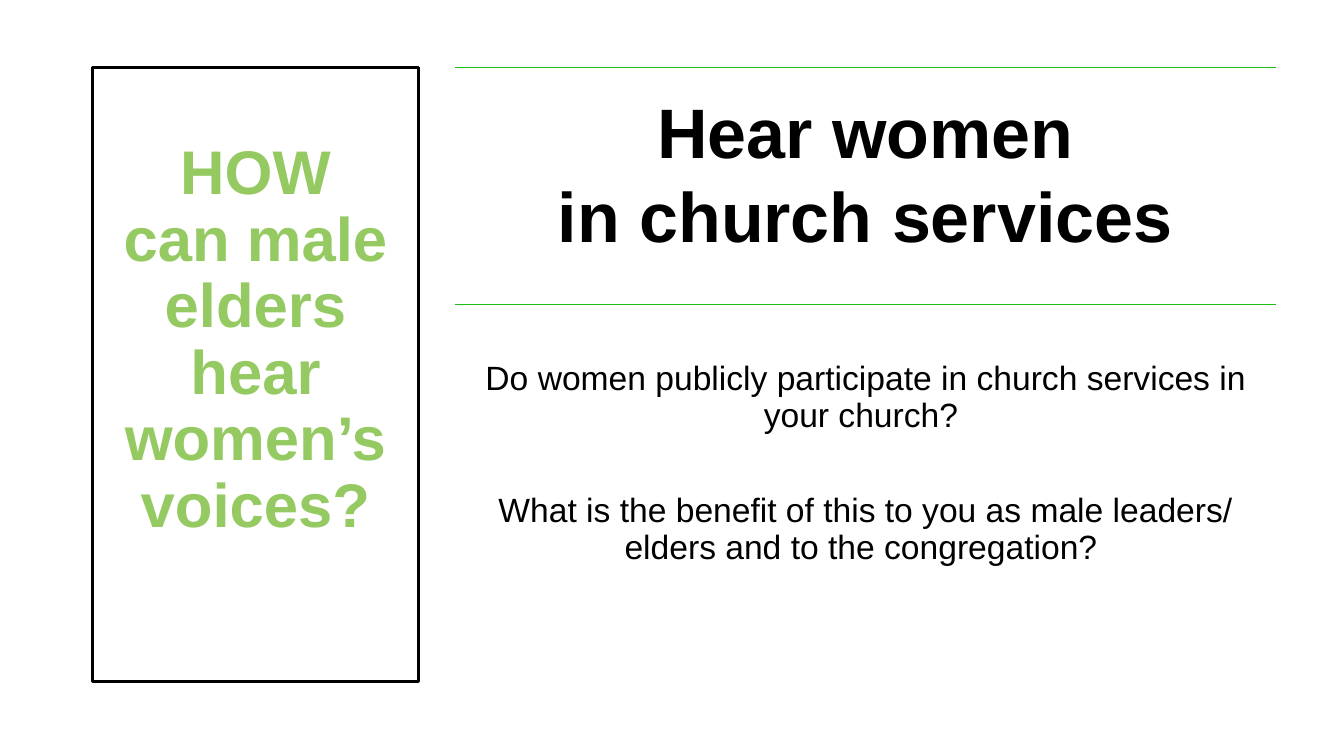
from pptx import Presentation
from pptx.dml.color import RGBColor
from pptx.enum.shapes import MSO_CONNECTOR, MSO_SHAPE
from pptx.enum.text import MSO_ANCHOR, PP_ALIGN
from pptx.util import Inches, Pt
from lxml import etree

COLORS = {"black": "000000", "rule": "1FBC14", "lime": "95CA63"}
LEFT, WIDTH, TOP = 4.51, 8.15, 0.67


def color(name):
    return RGBColor.from_string(COLORS[name])


def write(shape, lines, inset, font, para):
    """Fill a shape with centred paragraphs in one format."""
    frame = shape.text_frame
    frame.word_wrap = True
    for side in ("left", "top", "right", "bottom"):
        setattr(frame, "margin_" + side, Inches(inset))
    for i, line in enumerate(lines):
        p = frame.paragraphs[0] if i == 0 else frame.add_paragraph()
        p.text = line
        p.alignment = PP_ALIGN.CENTER
        for key, value in para.items():
            setattr(p, key, value)
        for run in p.runs:
            run.font.name = "Arial"
            run.font.color.rgb = color(font["color"])
            run.font.size = Pt(font["size"])
            run.font.bold = font["bold"]
    return frame


deck = Presentation()
deck.slide_width, deck.slide_height = Inches(13.33), Inches(7.5)
slide = deck.slides.add_slide(deck.slide_layouts[6])
shapes = slide.shapes

# Heading and questions
title = shapes.add_textbox(Inches(LEFT), Inches(TOP), Inches(WIDTH), Inches(1.57))
write(title, ["Hear women", "in church services"], 0.21,
      {"size": 50, "bold": True, "color": "black"}, {})

body = shapes.add_textbox(Inches(LEFT), Inches(3.49), Inches(WIDTH), Inches(3.27))
asks = [
    "Do women publicly participate in church services in your church? ",
    "What is the benefit of this to you as male leaders/ elders and to the congregation? ",
]
write(body, asks, 0.1, {"size": 24, "bold": False, "color": "black"},
      {"line_spacing": 0.9, "space_after": Pt(42.5)})

# Green rules above and below the heading
for y in (TOP, 3.02):
    rule = shapes.add_connector(MSO_CONNECTOR.STRAIGHT, Inches(LEFT), Inches(y),
                                Inches(LEFT + WIDTH), Inches(y))
    rule.line.color.rgb = color("rule")
    rule.line.width = Pt(1)
    props = rule._element.spPr
    etree.SubElement(props, props.tag.split("}")[0].replace(
        "presentationml", "drawingml").replace("/2006/main", "/2006/main") + "}effectLst")

# Framed question on the left
panel = shapes.add_shape(MSO_SHAPE.RECTANGLE, Inches(0.92), Inches(TOP),
                         Inches(3.23), Inches(6.09))
panel.shadow.inherit = False
panel.fill.background()
panel.line.color.rgb = color("black")
panel.line.width = Pt(2.25)
frame = write(panel, ["HOW\vcan male elders hear women’s voices?"], 0.1,
              {"size": 44, "bold": True, "color": "lime"}, {"line_spacing": 0.9})
frame.vertical_anchor = MSO_ANCHOR.MIDDLE
frame.margin_bottom = Inches(0.76)

deck.save("out.pptx")
